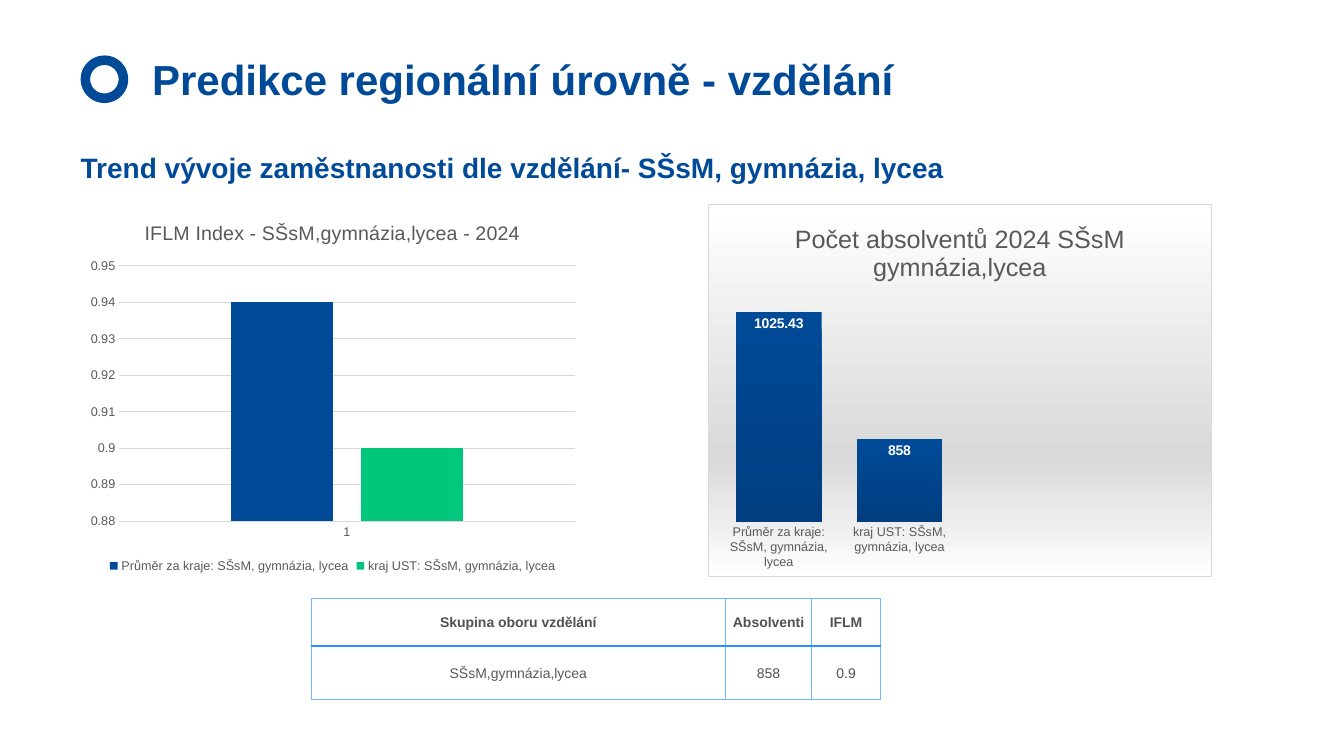
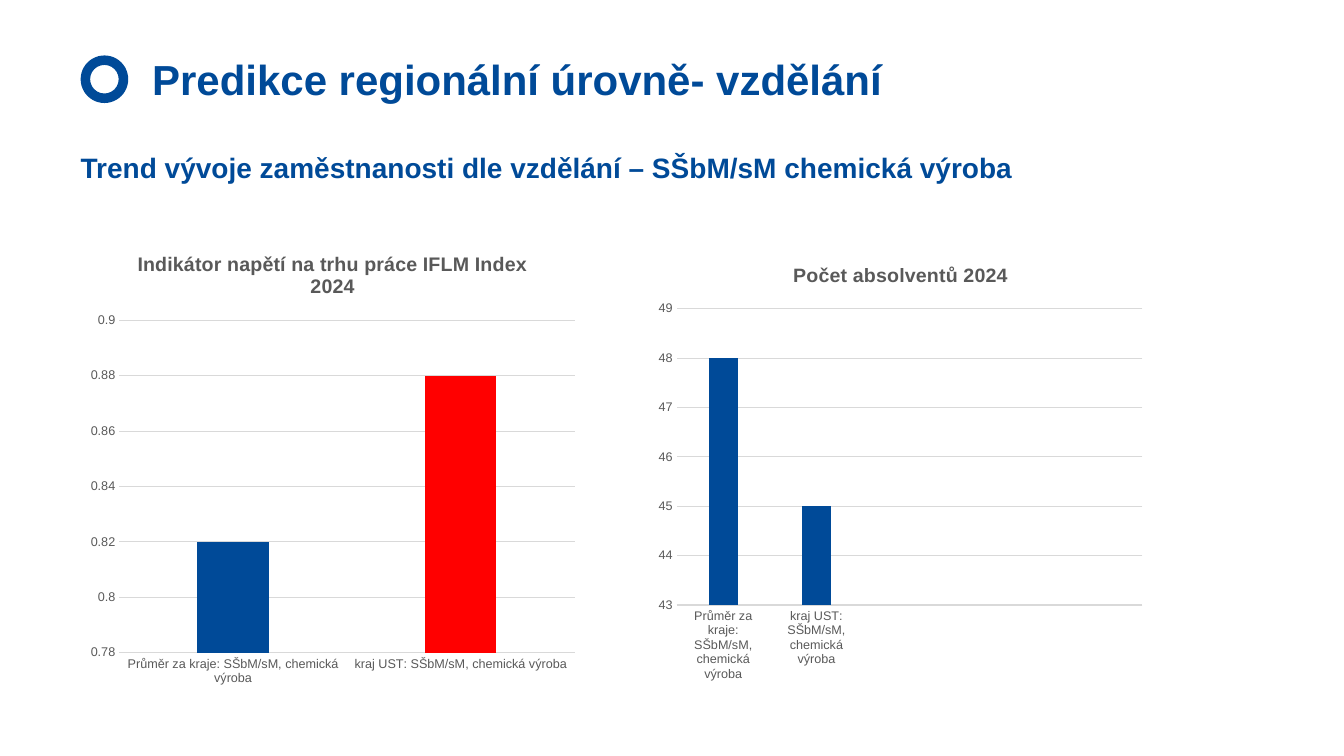
from pptx import Presentation
from pptx.chart.data import CategoryChartData
from pptx.dml.color import RGBColor
from pptx.enum.chart import XL_CHART_TYPE as ChartType
from pptx.enum.chart import XL_LABEL_POSITION as LabelPosition
from pptx.enum.chart import XL_LEGEND_POSITION as LegendPosition
from pptx.enum.chart import XL_TICK_MARK as TickMark
from pptx.enum.shapes import MSO_SHAPE as Shape
from pptx.enum.text import MSO_ANCHOR as Anchor
from pptx.enum.text import PP_ALIGN as Align
from pptx.oxml import parse_xml
from pptx.oxml.ns import nsdecls, qn
from pptx.util import Pt

FONT = "Arial"
COLORS = {
    "blue": "004A98", "navy": "003E80", "green": "00C77C", "red": "FF0000",
    "white": "FFFFFF", "grey": "595959", "ink": "505153", "rule": "D9D9D9",
    "border": "6FB5FF", "divider": "2890FF",
}
NO_MARGINS = dict.fromkeys(
    ("margin_left", "margin_top", "margin_right", "margin_bottom"), 0)
CELL_FORMAT = {"margin_left": Pt(5), "margin_right": Pt(5), "margin_top": 0,
               "margin_bottom": 0, "vertical_anchor": Anchor.MIDDLE}
LEFT = 57.6
CHART_WIDTH = 360


def rgb(name):
    return RGBColor.from_string(COLORS[name])


def apply(target, values):
    for name, value in values.items():
        setattr(target, name, value)


def style_font(font, size, color, bold=False):
    apply(font, {"name": FONT, "size": Pt(size), "bold": bold})
    font.color.rgb = rgb(color)


def style_line(line, color, width=0.75):
    line.color.rgb = rgb(color)
    line.width = Pt(width)


class Report:
    """Holds the deck's style and the slide being filled."""

    def __init__(self):
        self.deck = Presentation()
        apply(self.deck, {"slide_width": Pt(960), "slide_height": Pt(540)})
        self.page = None

    def add_page(self, title, heading):
        self.page = self.deck.slides.add_slide(self.deck.slide_layouts[6])
        self.add_emblem()
        self.add_text(title, (108.7, 42.5, 793.4, 65.5), 30)
        self.add_text(heading, (LEFT, 110.2, 844.6, 30), 20)

    def add_emblem(self):
        ring = self.page.shapes.add_shape(
            Shape.DONUT, Pt(LEFT), Pt(39.6), Pt(34), Pt(34))
        ring.shadow.inherit = False
        ring.adjustments[0] = 0.2
        ring.fill.solid()
        ring.fill.fore_color.rgb = rgb("blue")
        ring.line.fill.background()

    def add_text(self, text, place, size):
        box = self.page.shapes.add_textbox(*map(Pt, place))
        frame = box.text_frame
        apply(frame, {**NO_MARGINS, "word_wrap": True})
        para = frame.paragraphs[0]
        para.line_spacing = 0.9
        span = para.add_run()
        span.text = text
        style_font(span.font, size, "blue", True)

    def add_columns(self, title, place, categories, series, scale,
                    title_size=14, title_bold=False, gap=219, overlap=-27):
        """Add a column chart; series maps names to values, scale is (min, max, step)."""
        data = CategoryChartData()
        data.categories = categories
        for name, values in series.items():
            data.add_series(name, values)
        chart = self.page.shapes.add_chart(
            ChartType.COLUMN_CLUSTERED, *map(Pt, place), data).chart
        style_font(chart.font, 9, "grey")
        chart.has_legend = False

        chart.has_title = True
        span = chart.chart_title.text_frame.paragraphs[0].add_run()
        span.text = title
        style_font(span.font, title_size, "grey", title_bold)

        plot = chart.plots[0]
        apply(plot, {"gap_width": gap, "overlap": overlap,
                     "vary_by_categories": False})
        for bars, color in zip(plot.series, ("blue", "green")):
            bars.format.fill.solid()
            bars.format.fill.fore_color.rgb = rgb(color)

        for axis in (chart.category_axis, chart.value_axis):
            axis.major_tick_mark = axis.minor_tick_mark = TickMark.NONE
            style_font(axis.tick_labels.font, 9, "grey")
        style_line(chart.category_axis.format.line, "rule")
        values_axis = chart.value_axis
        apply(values_axis, dict(zip(
            ("minimum_scale", "maximum_scale", "major_unit"), scale)))
        values_axis.format.line.fill.background()
        style_line(values_axis.major_gridlines.format.line, "rule")
        return chart

    def add_legend(self, chart):
        chart.has_legend = True
        apply(chart.legend, {"position": LegendPosition.BOTTOM,
                             "include_in_layout": False})
        style_font(chart.legend.font, 9, "grey")

    def add_gradient_panel(self, chart):
        """Give the chart a framed grey gradient, shaded bars and value labels."""
        stops = "".join(
            f'<a:gs pos="{position * 1000}"><a:srgbClr val="{COLORS[color]}"/></a:gs>'
            for position, color in ((0, "white"), (68, "rule"), (100, "white")))
        panel = parse_xml(
            f'<c:spPr {nsdecls("c", "a")}><a:gradFill><a:gsLst>{stops}</a:gsLst>'
            f'<a:lin ang="5400000" scaled="0"/></a:gradFill><a:ln w="{Pt(0.75)}">'
            f'<a:solidFill><a:srgbClr val="{COLORS["rule"]}"/></a:solidFill>'
            '</a:ln></c:spPr>')
        chart.element.find(qn("c:chart")).addnext(panel)

        chart.category_axis.format.line.fill.background()
        apply(chart.value_axis, {"visible": False, "has_major_gridlines": False})
        plot = chart.plots[0]
        fill = plot.series[0].format.fill
        fill.gradient()
        fill.gradient_angle = 270
        for stop, color in zip(fill.gradient_stops, ("blue", "navy")):
            stop.color.rgb = rgb(color)
        plot.has_data_labels = True
        labels = plot.data_labels
        apply(labels, {"show_value": True, "position": LabelPosition.INSIDE_END})
        style_font(labels.font, 10, "white", True)

    def add_table(self, rows, place, widths, heights):
        table = self.page.shapes.add_table(
            len(rows), len(widths), *map(Pt, place),
            Pt(sum(widths)), Pt(sum(heights))).table
        apply(table, {"first_row": False, "horz_banding": False})
        for column, width in zip(table.columns, widths):
            column.width = Pt(width)
        for index, (row, height) in enumerate(zip(table.rows, heights)):
            row.height = Pt(height)
            for cell, text in zip(row.cells, rows[index]):
                apply(cell, CELL_FORMAT)
                para = cell.text_frame.paragraphs[0]
                apply(para, {"alignment": Align.CENTER, "line_spacing": Pt(12)})
                span = para.add_run()
                span.text = text
                style_font(span.font, 10, "ink", index == 0)
                cell.fill.background()
                self.add_borders(cell, "B" if index == 0 else "T")
        return table

    def add_borders(self, cell, divider_side):
        properties = cell._tc.get_or_add_tcPr()
        for position, side in enumerate("LRTB"):
            color, width = (("divider", 1.5) if side == divider_side
                            else ("border", 1))
            properties.insert(position, parse_xml(
                f'<a:ln{side} {nsdecls("a")} w="{Pt(width)}"><a:solidFill>'
                f'<a:srgbClr val="{COLORS[color]}"/></a:solidFill></a:ln{side}>'))


def build_grammar_schools(report):
    report.add_page("Predikce regionální úrovně - vzdělání",
                    "Trend vývoje zaměstnanosti dle vzdělání- SŠsM, gymnázia, lycea")
    average, region = ("Průměr za kraje: SŠsM, gymnázia, lycea",
                       "kraj UST: SŠsM, gymnázia, lycea")
    index_chart = report.add_columns(
        "IFLM Index - SŠsM,gymnázia,lycea - 2024",
        (LEFT, 146, CHART_WIDTH, 266.4), ["1"],
        {average: [0.94], region: [0.9]}, (0.88, 0.95, 0.01))
    report.add_legend(index_chart)
    graduates_chart = report.add_columns(
        "Počet absolventů 2024 SŠsM gymnázia,lycea",
        (505.6, 146, CHART_WIDTH, 266.4), [average, region, "", ""],
        {"Series 1": [1025.43, 858, None, None]}, (750, 1045, 50),
        title_size=18, gap=41, overlap=0)
    report.add_gradient_panel(graduates_chart)
    table = report.add_table(
        [["Skupina oboru vzdělání", "Absolventi", "IFLM"],
         ["SŠsM,gymnázia,lycea", "858", "0.9"]],
        (222.3, 427.6), (295.8, 61.8, 49), (33.8, 38.2))
    group_span = table.cell(1, 0).text_frame.paragraphs[0].runs[0]
    group_span.font.color.rgb = rgb("grey")


def build_chemical_production(report):
    report.add_page("Predikce regionální úrovně- vzdělání",
                    "Trend vývoje zaměstnanosti dle vzdělání – SŠbM/sM chemická výroba")
    categories = ["Průměr za kraje: SŠbM/sM, chemická výroba",
                  "kraj UST: SŠbM/sM, chemická výroba"]
    index_chart = report.add_columns(
        "Indikátor napětí na trhu práce IFLM Index 2024",
        (LEFT, 166.7, CHART_WIDTH, 330), categories,
        {"Series 1": [0.82, 0.88]}, (0.78, 0.9, 0.02), title_bold=True)
    region_fill = index_chart.plots[0].series[0].points[1].format.fill
    region_fill.solid()
    region_fill.fore_color.rgb = rgb("red")
    report.add_columns(
        "Počet absolventů 2024", (463.3, 175.4, CHART_WIDTH, 311),
        categories + [""] * 3, {"Series 1": [48, 45, None, None, None]},
        (43, 49, 1), title_bold=True)


def main():
    report = Report()
    build_grammar_schools(report)
    build_chemical_production(report)
    report.deck.save("out.pptx")


if __name__ == "__main__":
    main()
